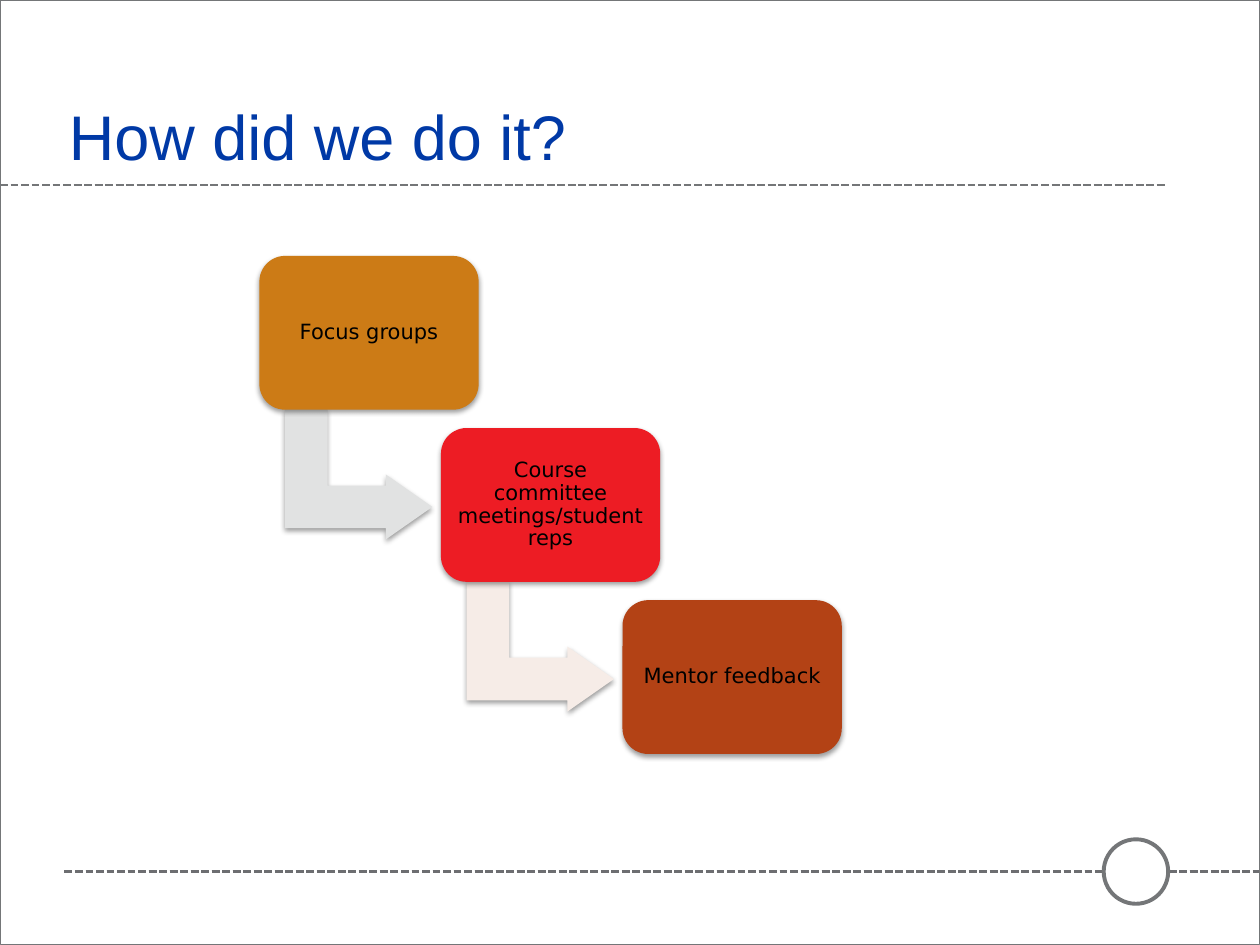
from lxml import etree
from pptx import Presentation
from pptx.dml.color import RGBColor
from pptx.enum import dml, shapes, text
from pptx.oxml import ns
from pptx.util import Cm, Pt

BLUE = RGBColor(0x00, 0x39, 0xA6)
GRAY = RGBColor(0x74, 0x76, 0x78)
DARK_GRAY = RGBColor(0x6D, 0x6E, 0x71)
WHITE = RGBColor(0xFF, 0xFF, 0xFF)
BLACK = RGBColor(0x00, 0x00, 0x00)
ORANGE = RGBColor(0xCC, 0x7B, 0x16)
RED = RGBColor(0xED, 0x1C, 0x24)
RUST = RGBColor(0xB3, 0x42, 0x15)
PALE_GRAY = RGBColor(0xE1, 0xE2, 0xE2)
PALE_PINK = RGBColor(0xF6, 0xEC, 0xE7)

SLIDE_WIDTH, SLIDE_HEIGHT = 25.4, 19.05

# Each step: label, box colour, colour of the arrow to the next step
STEPS = [
    ("Focus groups", ORANGE, PALE_GRAY),
    ("Course committee meetings/student reps", RED, PALE_PINK),
    ("Mentor feedback", RUST, None),
]
FIRST_LEFT, FIRST_TOP = 5.23, 5.16
STEP_RIGHT, STEP_DOWN = 3.66, 3.47
BOX_WIDTH, BOX_HEIGHT = 4.42, 3.1
ARROW_RIGHT, ARROW_DOWN = 0.69, 2.92
ARROW_WIDTH, ARROW_HEIGHT = 2.62, 2.97


def add_dashed_line(slide, left, right, y, color):
    line = slide.shapes.add_connector(
        shapes.MSO_CONNECTOR.STRAIGHT, Cm(left), Cm(y), Cm(right), Cm(y))
    line.line.color.rgb = color
    line.line.width = Pt(1.5)
    line.line.dash_style = dml.MSO_LINE.SQUARE_DOT
    etree.SubElement(line._element.spPr, ns.qn("a:effectLst"))


def add_shape(slide, kind, left, top, width, height, fill=None):
    """Add a shape without line or shadow; no fill colour means transparent."""
    shape = slide.shapes.add_shape(
        kind, Cm(left), Cm(top), Cm(width), Cm(height))
    shape.shadow.inherit = False
    shape.line.fill.background()
    if fill is None:
        shape.fill.background()
    else:
        shape.fill.solid()
        shape.fill.fore_color.rgb = fill
    return shape


def add_outline(shape, width):
    shape.line.color.rgb = GRAY
    shape.line.width = Pt(width)


def add_soft_shadow(shape):
    effects = shape._element.spPr.find(ns.qn("a:effectLst"))
    shadow = etree.SubElement(
        effects, ns.qn("a:outerShdw"), blurRad=str(Pt(3.1)),
        dist=str(Pt(1.6)), dir="5400000", rotWithShape="0")
    color = etree.SubElement(shadow, ns.qn("a:srgbClr"), val=str(BLACK))
    etree.SubElement(color, ns.qn("a:alpha"), val="38000")


def format_font(paragraph, name, size, color):
    font = paragraph.runs[0].font
    font.name = name
    font.size = Pt(size)
    font.color.rgb = color


def add_title(slide, title):
    box = slide.shapes.add_textbox(Cm(1.14), Cm(1.55), Cm(19.35), Cm(2.36))
    frame = box.text_frame
    frame.word_wrap = True
    frame.vertical_anchor = text.MSO_ANCHOR.MIDDLE
    frame.text = title
    format_font(frame.paragraphs[0], "Arial", 36, BLUE)


def add_step_arrow(slide, left, top, color):
    arrow = add_shape(slide, shapes.MSO_SHAPE.BENT_UP_ARROW,
                      left, top, ARROW_WIDTH, ARROW_HEIGHT, color)
    arrow.rotation = 90
    for index, value in enumerate((0.328, 0.25, 0.358)):
        arrow.adjustments[index] = value
    add_soft_shadow(arrow)


def add_step_box(slide, left, top, label, color):
    box = add_shape(slide, shapes.MSO_SHAPE.ROUNDED_RECTANGLE,
                    left, top, BOX_WIDTH, BOX_HEIGHT, color)
    box.adjustments[0] = 0.167
    add_soft_shadow(box)
    frame = box.text_frame
    frame.word_wrap = True
    frame.vertical_anchor = text.MSO_ANCHOR.MIDDLE
    frame.margin_left = frame.margin_right = Cm(0.13)
    frame.margin_top = frame.margin_bottom = Cm(0.13)
    frame.text = label
    paragraph = frame.paragraphs[0]
    paragraph.alignment = text.PP_ALIGN.CENTER
    paragraph.line_spacing = 0.9
    format_font(paragraph, "DejaVu Sans", 12, BLACK)


def add_frame(slide):
    """Add the page border, the rules and the footer circle."""
    for color in (GRAY, DARK_GRAY):
        add_dashed_line(slide, 1.3, SLIDE_WIDTH, 17.57, color)
    circle = add_shape(slide, shapes.MSO_SHAPE.OVAL,
                       22.25, 16.92, 1.3, 1.3, WHITE)
    add_outline(circle, 2.25)
    border = add_shape(slide, shapes.MSO_SHAPE.RECTANGLE,
                       0, 0, SLIDE_WIDTH, SLIDE_HEIGHT)
    add_outline(border, 0.5)
    add_dashed_line(slide, 0, 23.5, 3.73, GRAY)


def main():
    presentation = Presentation()
    presentation.slide_width = Cm(SLIDE_WIDTH)
    presentation.slide_height = Cm(SLIDE_HEIGHT)
    slide = presentation.slides.add_slide(presentation.slide_layouts[6])

    add_frame(slide)
    add_title(slide, "How did we do it?")
    for index, (label, box_color, arrow_color) in enumerate(STEPS):
        left = FIRST_LEFT + index * STEP_RIGHT
        top = FIRST_TOP + index * STEP_DOWN
        if arrow_color is not None:
            add_step_arrow(slide, left + ARROW_RIGHT, top + ARROW_DOWN,
                           arrow_color)
        add_step_box(slide, left, top, label, box_color)

    presentation.save("out.pptx")


if __name__ == "__main__":
    main()
